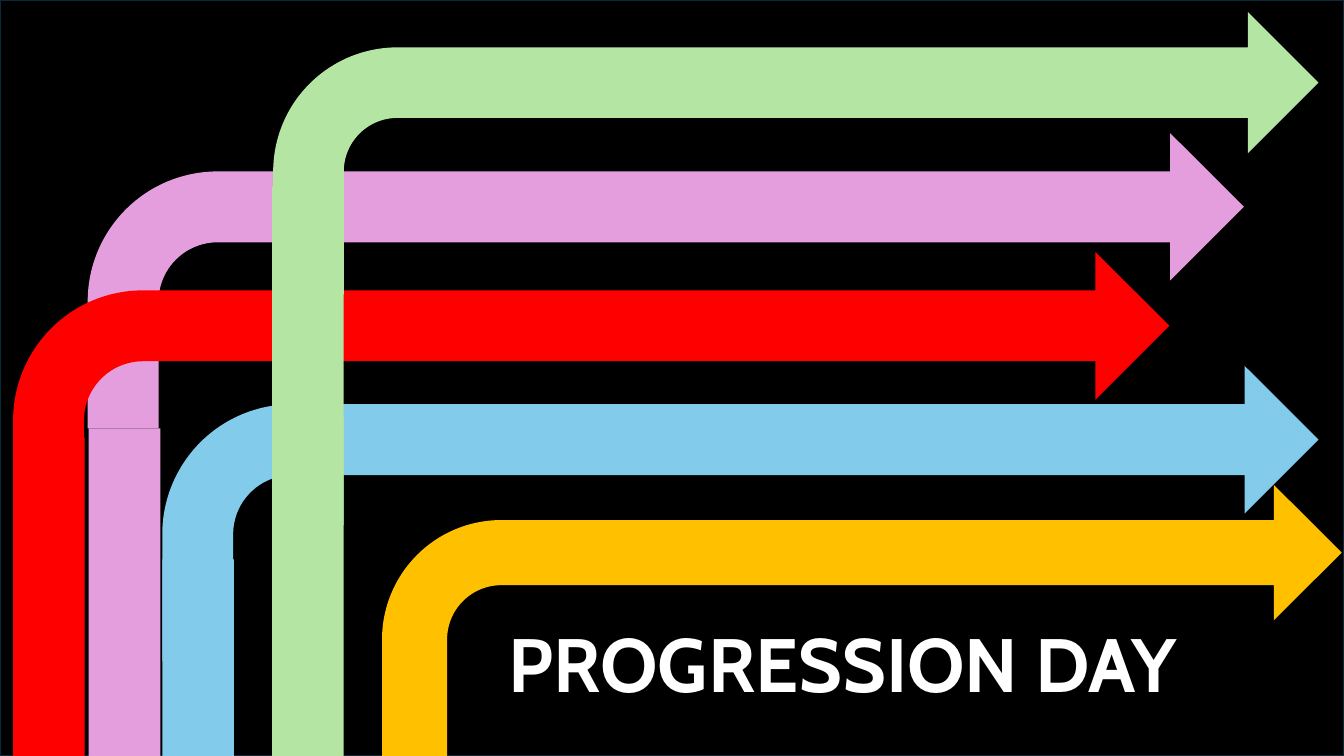
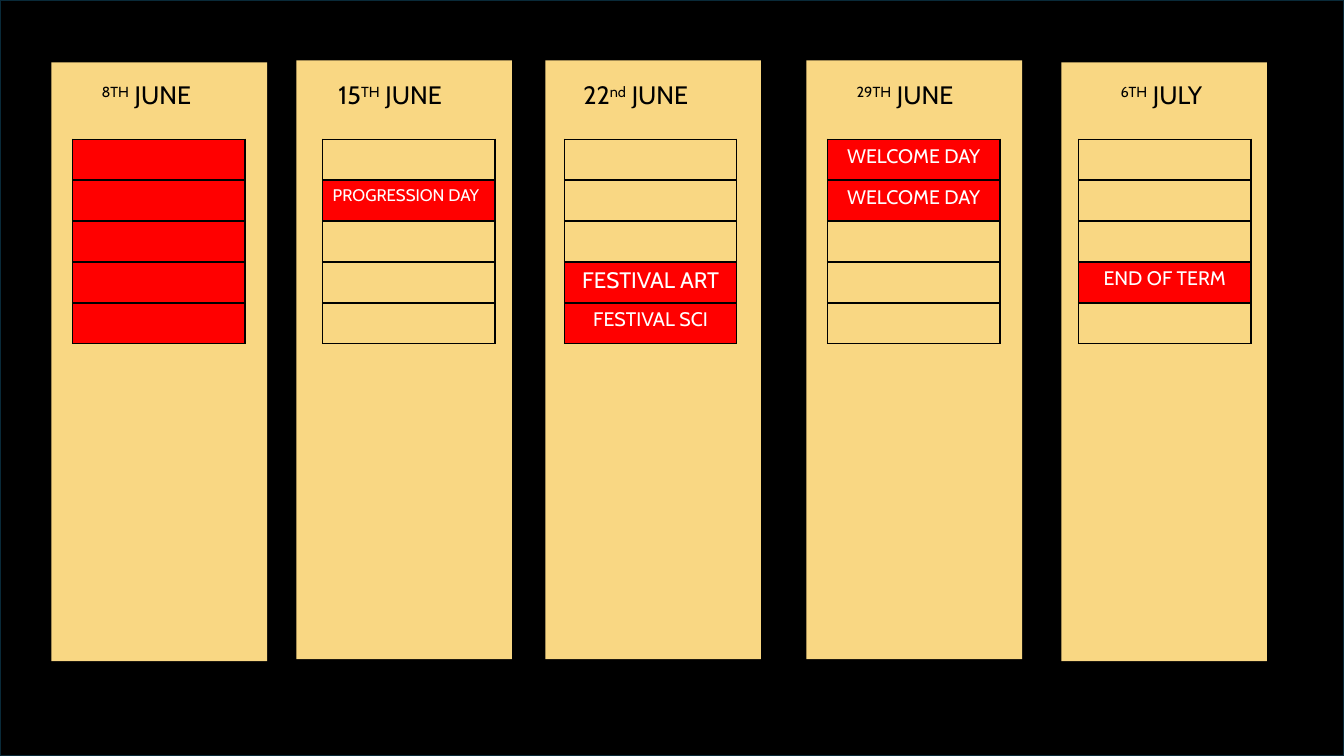
from dataclasses import dataclass

from lxml import etree
from pptx import Presentation
from pptx import util as u
from pptx.dml.color import RGBColor
from pptx.enum import shapes, text
from pptx.oxml.ns import qn

COLS, ROWS = 160, 90


@dataclass(frozen=True)
class Theme:
    font: str = "Cabin"
    black: str = "000000"
    white: str = "FFFFFF"
    edge: str = "092A39"
    red: str = "FF0000"
    pink: str = "E59EDD"
    blue: str = "83CBEB"
    amber: str = "FFC000"
    green: str = "B4E5A2"
    sand: str = "F9D783"
    title_pt: int = 54
    date_pt: int = 18
    event_pt: int = 14
    edge_pt: float = 1.5
    border_pt: int = 1


THEME = Theme()


def add_run(p, words, *, size, color, bold=False, raised=False):
    r = p.add_run()
    r.text = words
    r.font.name = THEME.font
    r.font.size = u.Pt(size)
    r.font.bold = bold
    r.font.color.rgb = RGBColor.from_string(color)
    if raised:
        r.font._element.set("baseline", "30000")
    return r


class Deck:
    def __init__(self):
        self.prs = Presentation()
        self.prs.slide_width = u.Inches(13.33)
        self.prs.slide_height = u.Inches(7.5)
        self.slide = None

    def new_slide(self, layout):
        self.slide = self.prs.slides.add_slide(self.prs.slide_layouts[layout])
        self.shape(shapes.MSO_SHAPE.RECTANGLE, 0, 0, COLS, ROWS, THEME.black, THEME.edge)

    def box(self, col, row, cols, rows):
        x = self.prs.slide_width / COLS
        y = self.prs.slide_height / ROWS
        return [round(v) for v in (col * x, row * y, cols * x, rows * y)]

    def shape(self, kind, col, row, cols, rows, color, line=None):
        sp = self.slide.shapes.add_shape(kind, *self.box(col, row, cols, rows))
        sp.shadow.inherit = False
        sp.fill.solid()
        sp.fill.fore_color.rgb = RGBColor.from_string(color)
        if line:
            sp.line.color.rgb = RGBColor.from_string(line)
            sp.line.width = u.Pt(THEME.edge_pt)
        else:
            sp.line.fill.background()
        return sp

    def bar(self, col, row, cols, rows, color):
        return self.shape(shapes.MSO_SHAPE.RECTANGLE, col, row, cols, rows, color)

    def arrow(self, col, row, cols, rows, color, shaft):
        sp = self.shape(shapes.MSO_SHAPE.BENT_ARROW, col, row, cols, rows, color)
        for i, value in enumerate((shaft, 0.25, 0.25, 0.44)):
            sp.adjustments[i] = value

    def title(self, words, col, row, cols, rows):
        sp = self.slide.shapes.title
        sp._element.getparent().append(sp._element)
        sp.left, sp.top, sp.width, sp.height = self.box(col, row, cols, rows)
        tf = sp.text_frame
        tf.word_wrap = True
        tf.vertical_anchor = text.MSO_ANCHOR.TOP
        tf.auto_size = text.MSO_AUTO_SIZE.SHAPE_TO_FIT_TEXT
        p = tf.paragraphs[0]
        p.alignment = text.PP_ALIGN.LEFT
        add_run(p, words, size=THEME.title_pt, color=THEME.white, bold=True)

    def date(self, parts, col, row, cols, rows):
        sp = self.slide.shapes.add_textbox(*self.box(col, row, cols, rows))
        tf = sp.text_frame
        tf.word_wrap = True
        tf.auto_size = text.MSO_AUTO_SIZE.SHAPE_TO_FIT_TEXT
        for words, raised in zip(parts, (False, True, False)):
            if words:
                add_run(tf.paragraphs[0], words, size=THEME.date_pt,
                        color=THEME.black, raised=raised)

    def week(self, days, col, row, cols, rows):
        frame = self.slide.shapes.add_table(len(days), 1, *self.box(col, row, cols, rows))
        table = frame.table
        table.first_row = table.horz_banding = False
        for i, day in enumerate(days):
            cell = table.cell(i, 0)
            cell.fill.solid()
            color = THEME.sand if day is None else THEME.red
            cell.fill.fore_color.rgb = RGBColor.from_string(color)
            self.borders(cell)
            if day:
                words, size, align = day
                p = cell.text_frame.paragraphs[0]
                p.alignment = align
                add_run(p, words, size=size, color=THEME.white)

    def borders(self, cell):
        props = cell._tc.get_or_add_tcPr()
        for i, side in enumerate(("lnL", "lnR", "lnT", "lnB")):
            ln = etree.Element(qn(f"a:{side}"), w=str(u.Pt(THEME.border_pt)))
            fill = etree.SubElement(ln, qn("a:solidFill"))
            etree.SubElement(fill, qn("a:srgbClr"), val=THEME.black)
            props.insert(i, ln)


def event(words, size=THEME.event_pt, align=text.PP_ALIGN.CENTER):
    return words, size, align


def build_cover(deck):
    deck.new_slide(5)
    for col, row, color in (
        (10.44, 15.84, THEME.pink),
        (1.56, 30, THEME.red),
        (19.32, 43.56, THEME.blue),
    ):
        deck.arrow(col, row, 137.64, 35.16, color, 0.24)
    deck.arrow(45.48, 57.72, 114.24, 32.28, THEME.amber, 0.24)
    for col, row, rows, color in (
        (1.56, 52.08, 37.92, THEME.red),
        (19.32, 66.6, 23.4, THEME.blue),
        (10.56, 51, 39, THEME.pink),
        (32.4, 49.68, 40.32, THEME.green),
        (32.4, 22.2, 40.32, THEME.green),
    ):
        deck.bar(col, row, 8.52, rows, color)
    deck.arrow(32.52, 1.44, 124.44, 33.6, THEME.green, 0.25)
    deck.title("PROGRESSION DAY", 59.28, 72.84, 88.68, 12.12)


def build_calendar(deck):
    deck.new_slide(6)
    free, busy = None, ()
    progression = event("PROGRESSION DAY", 12, text.PP_ALIGN.LEFT)
    welcome = event("WELCOME DAY")
    weeks = (
        (6.12, 7.44, 25.68, 10.92, 8.64, ("", "8TH", " JUNE"), [busy] * 5),
        (35.28, 7.2, 25.68, 39.12, 38.4, ("15", "TH", " JUNE"),
         [free, progression, free, free, free]),
        (64.92, 7.2, 25.68, 68.28, 67.2, ("22", "nd", " JUNE"),
         [free, free, free, event("FESTIVAL ART", 16), event("FESTIVAL SCI")]),
        (96, 7.2, 25.68, 100.8, 98.52, ("", "29TH", " JUNE"),
         [welcome, welcome, free, free, free]),
        (126.36, 7.44, 24.48, 132.24, 128.4, ("", "6TH", " JULY"),
         [free, free, free, event("END OF TERM"), free]),
    )
    for panel_col, panel_row, panel_cols, date_col, week_col, date, days in weeks:
        deck.bar(panel_col, panel_row, panel_cols, 71.28, THEME.sand)
        deck.date(date, date_col, 8.88, 20.5, 4.8)
        deck.week(days, week_col, 16.56, 20.52, 24.4)


def main():
    deck = Deck()
    build_cover(deck)
    build_calendar(deck)
    deck.prs.save("out.pptx")


if __name__ == "__main__":
    main()
